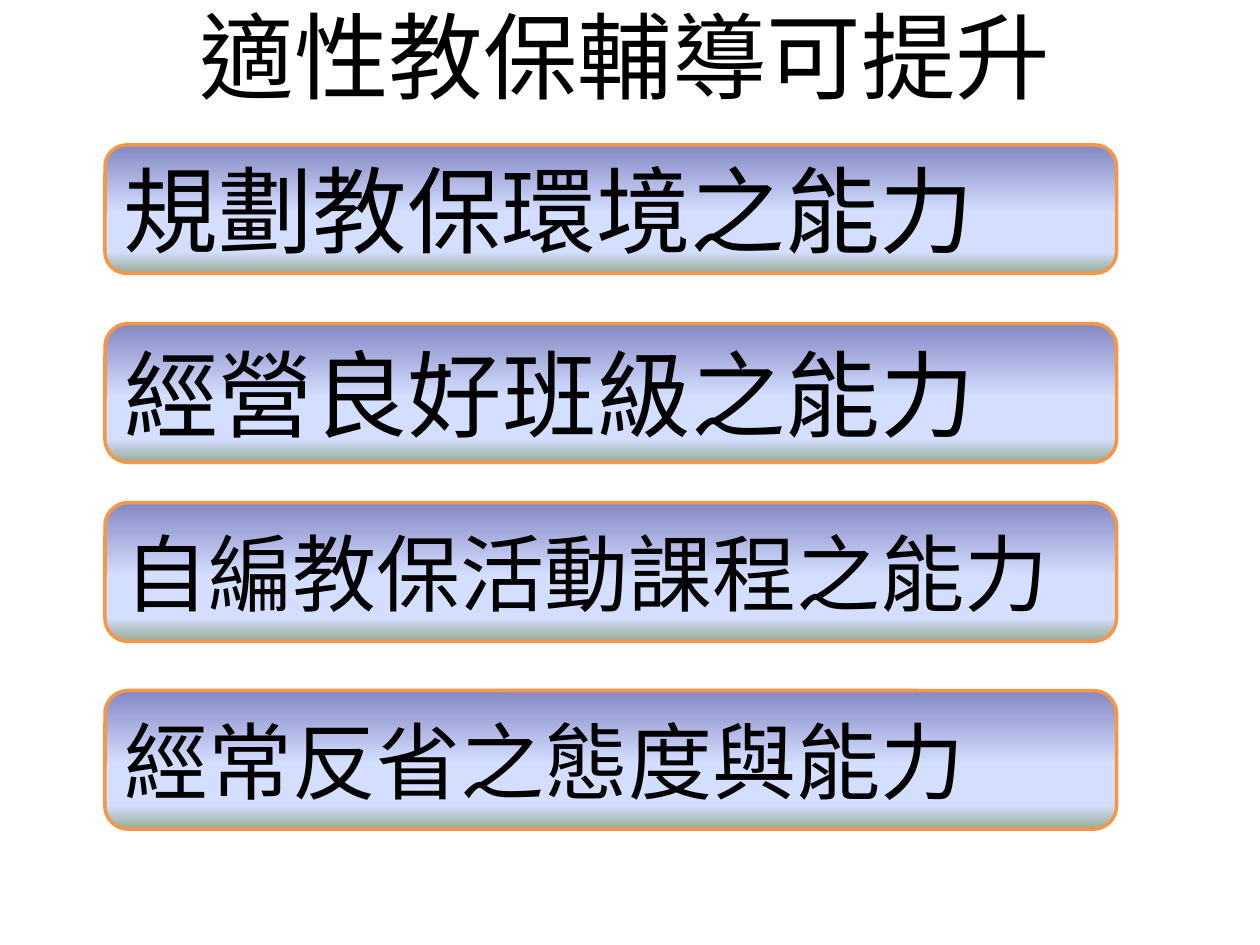
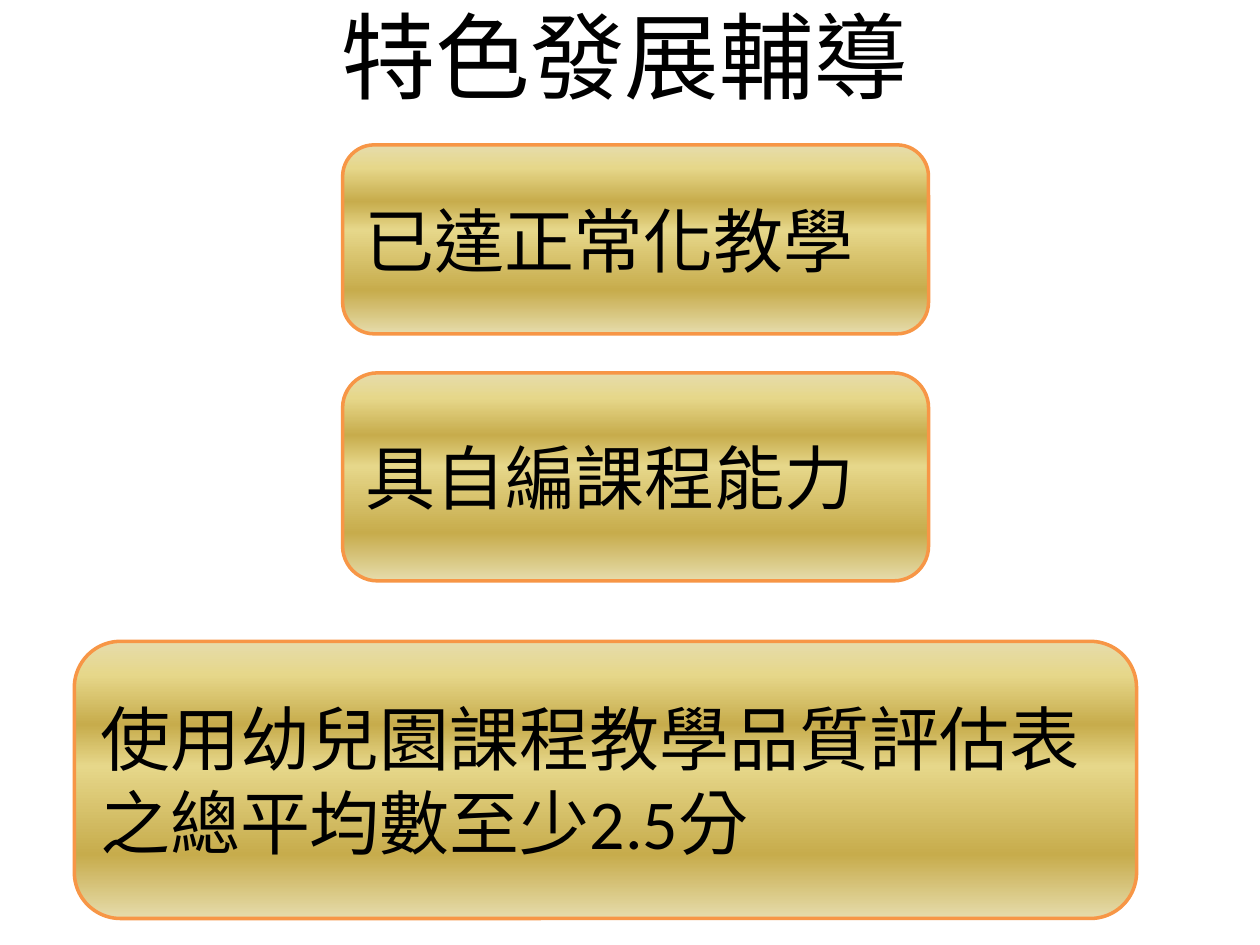
from lxml import etree
from pptx import Presentation
from pptx.dml.color import RGBColor
from pptx.enum.lang import MSO_LANGUAGE_ID
from pptx.enum.shapes import MSO_SHAPE
from pptx.enum.text import MSO_ANCHOR, PP_ALIGN
from pptx.oxml.ns import qn
from pptx.util import Pt

ROUNDED = MSO_SHAPE.ROUNDED_RECTANGLE
MIDDLE = MSO_ANCHOR.MIDDLE
LEFT, CENTER = PP_ALIGN.LEFT, PP_ALIGN.CENTER
CHINESE = MSO_LANGUAGE_ID.TRADITIONAL_CHINESE

BLACK = RGBColor(0x00, 0x00, 0x00)
ORANGE = RGBColor(0xF7, 0x96, 0x46)
PERIWINKLE = RGBColor(0x84, 0x88, 0xC4)
PALE_BLUE = RGBColor(0xD4, 0xDE, 0xFF)
SAGE = RGBColor(0x96, 0xAB, 0x94)
CREAM = RGBColor(0xE6, 0xDC, 0xAC)
STRAW = RGBColor(0xE6, 0xD7, 0x8A)
GOLD = RGBColor(0xC7, 0xAC, 0x4C)

# Gradient stops from top to bottom: percent, colour
BLUE_BAND = [(0, PERIWINKLE), (53, PALE_BLUE), (83, PALE_BLUE), (100, SAGE)]
GOLD_BAND = [(0, CREAM), (12, STRAW), (30, GOLD), (45, STRAW), (77, GOLD), (100, CREAM)]

SANS = "Noto Sans CJK SC"
BODY = "Calibri"

# Each card: text, size, left, top, width, height
SLIDES = [
    ("適性教保輔導可提升", BLUE_BAND, SANS, [
        ("規劃教保環境之能力", 54, 60, 82.8, 578, 73.4),
        ("經營良好班級之能力", 54, 60, 185, 578, 79.2),
        ("自編教保活動課程之能力", 48, 60, 287.3, 578, 79.2),
        ("經常反省之態度與能力", 48, 60, 394.6, 578, 79.2),
    ]),
    ("特色發展輔導", GOLD_BAND, BODY, [
        ("已達正常化教學", 40, 195.8, 82.8, 334.8, 108),
        ("具自編課程能力", 40, 195.8, 213.1, 334.8, 118.8),
        ("使用幼兒園課程教學品質評估表之總平均數至少2.5分", 40, 42.5, 366.5, 607, 158.4),
    ]),
]


def write(shape, text, size, font=SANS, align=LEFT):
    frame = shape.text_frame
    frame.word_wrap = True
    frame.vertical_anchor = MIDDLE
    para = frame.paragraphs[0]
    para.alignment = align
    span = para.add_run()
    span.text = text
    span.font.size = Pt(size)
    span.font.name = font
    span.font.color.rgb = BLACK
    span.font.language_id = CHINESE
    east_asian = etree.SubElement(span.font._element, qn("a:ea"))
    east_asian.set("typeface", font)


def fill_gradient(shape, stops):
    shape.fill.gradient()
    shape.fill.gradient_angle = 270
    stop_list = shape._element.spPr.find(qn("a:gradFill")).find(qn("a:gsLst"))
    for old_stop in list(stop_list):
        stop_list.remove(old_stop)
    for percent, colour in stops:
        stop = etree.SubElement(stop_list, qn("a:gs"), pos=str(percent * 1000))
        etree.SubElement(stop, qn("a:srgbClr"), val=str(colour))


deck = Presentation()
deck.slide_width, deck.slide_height = Pt(720), Pt(540)
blank = deck.slide_layouts[6]

for title, band, font, cards in SLIDES:
    page = deck.slides.add_slide(blank)
    title_box = page.shapes.add_textbox(Pt(48.2), Pt(0), Pt(617.8), Pt(62.6))
    write(title_box, title, 54, align=CENTER)
    for text, size, left, top, width, height in cards:
        card = page.shapes.add_shape(ROUNDED, Pt(left), Pt(top), Pt(width), Pt(height))
        card.shadow.inherit = False
        fill_gradient(card, band)
        card.line.color.rgb = ORANGE
        card.line.width = Pt(2)
        write(card, text, size, font=font)

deck.save("out.pptx")
